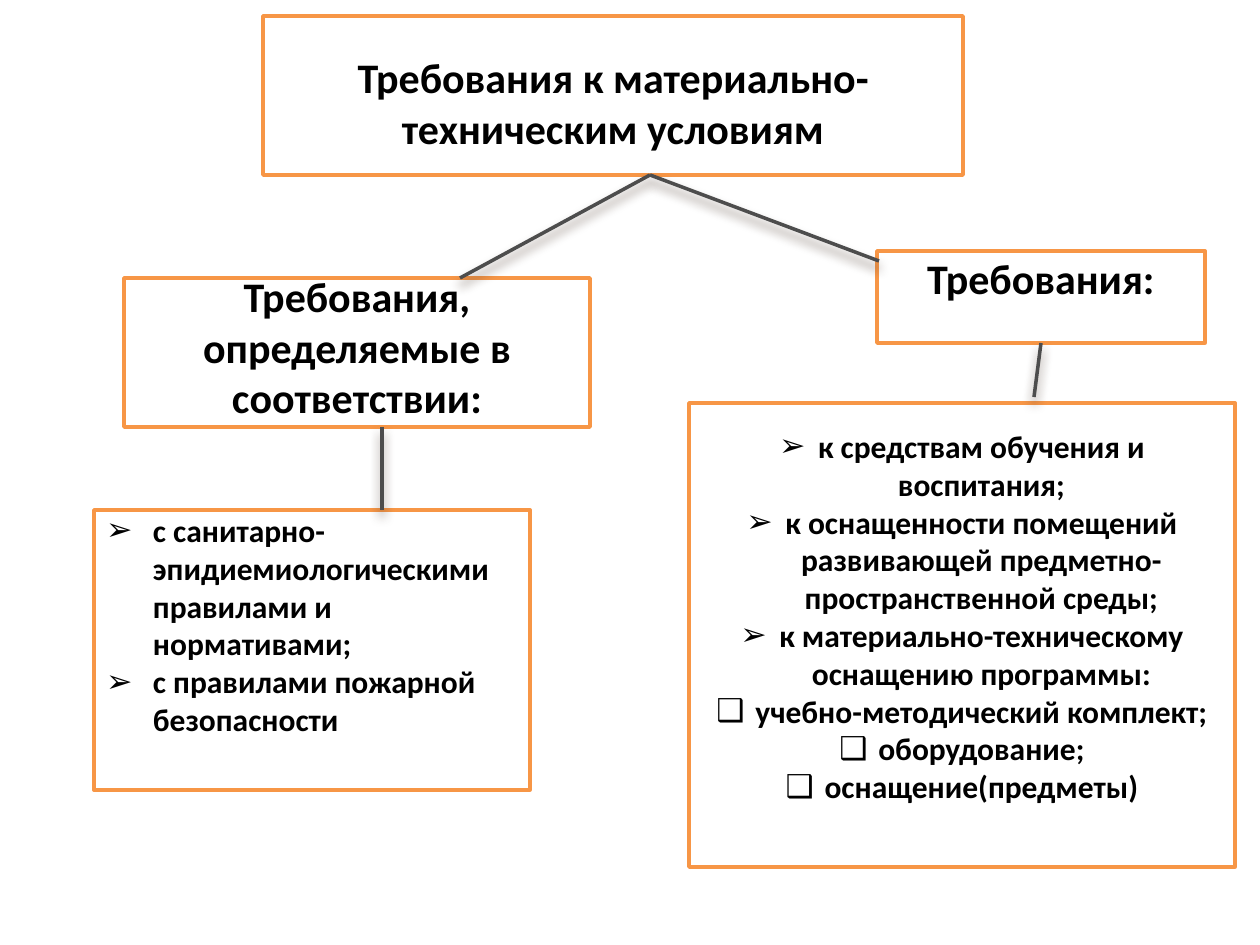
from lxml import etree
from pptx import Presentation
from pptx import util as u
from pptx.dml.color import RGBColor
from pptx.enum import shapes, text
from pptx.oxml.ns import qn

PX = 914400 / 126
COMPARISON_LAYOUT = 4
ARROW, SQUARE = "➢", "❑"


def px(length):
    return u.Emu(round(length * PX))


def color(value):
    return RGBColor.from_string(value)


def write(para, words, size=24, align=text.PP_ALIGN.CENTER, bullet=None, indent=0):
    para.alignment = align
    para.space_before = u.Pt(0)
    span = para.add_run()
    span.text = words
    span.font.name = "Calibri"
    span.font.size = u.Pt(size)
    span.font.bold = True
    span.font.color.rgb = color("000000")
    if bullet:
        props = para._p.get_or_add_pPr()
        props.set("marL", str(px(indent)))
        props.set("indent", str(-px(indent)))
        props.set("lvl", "0")
        etree.SubElement(props, qn("a:buChar")).set("char", bullet)


def frame(box, area, top=6, bottom=6):
    """Place the box, outline it and return its emptied text frame."""
    box.left, box.top, box.width, box.height = map(px, area)
    box.fill.solid()
    box.fill.fore_color.rgb = color("FFFFFF")
    box.line.color.rgb = color("F79646")
    box.line.width = u.Pt(2)
    body = box.text_frame
    body.word_wrap = True
    body.auto_size = text.MSO_AUTO_SIZE.NONE
    body.vertical_anchor = text.MSO_ANCHOR.MIDDLE
    body.margin_left = body.margin_right = px(12)
    body.margin_top, body.margin_bottom = px(top), px(bottom)
    return body


def heading(box, area, words, **margins):
    write(frame(box, area, **margins).paragraphs[0], words)


def bullet_list(box, area, items, bottom, **style):
    body = frame(box, area, bottom=bottom)
    for number, (bullet, words) in enumerate(items):
        para = body.add_paragraph() if number else body.paragraphs[0]
        write(para, words, size=18, bullet=bullet, **style)


def link(page, start, end):
    line = page.shapes.add_connector(
        shapes.MSO_CONNECTOR.STRAIGHT, *map(px, (*start, *end)))
    line.line.color.rgb = color("4D4D4D")
    line.line.width = u.Pt(2)
    effects = etree.SubElement(line._element.spPr, qn("a:effectLst"))
    shadow = etree.SubElement(
        effects, qn("a:outerShdw"), blurRad=str(u.Pt(6)), dist=str(u.Pt(4)),
        dir="5400000", rotWithShape="0")
    tint = etree.SubElement(shadow, qn("a:srgbClr"), val="4E3B30")
    etree.SubElement(tint, qn("a:alpha"), val="60000")
    return line


def requirements_page(deck):
    page = deck.slides.add_slide(deck.slide_layouts[COMPARISON_LAYOUT])
    title, norms, norm_list, needs, need_list = page.placeholders

    heading(title, (263, 16, 700, 159),
            "Требования к материально-техническим условиям", top=19)
    heading(norms, (124, 278, 466, 149),
            "Требования, определяемые в соответствии:", top=0, bottom=12)
    heading(needs, (877, 251, 328, 92), "Требования:", top=0, bottom=38)

    bullet_list(norm_list, (94, 510, 436, 280), [
        (ARROW, "с санитарно-эпидиемиологическими правилами и нормативами;"),
        (ARROW, "с правилами пожарной безопасности"),
    ], bottom=57, align=text.PP_ALIGN.LEFT, indent=47)
    bullet_list(need_list, (689, 403, 546, 464), [
        (ARROW, "к средствам обучения и воспитания;"),
        (ARROW, "к оснащенности помещений развивающей предметно-пространственной среды;"),
        (ARROW, "к материально-техническому оснащению программы:"),
        (SQUARE, "учебно-методический комплект;"),
        (SQUARE, "оборудование;"),
        (SQUARE, "оснащение(предметы)"),
    ], bottom=44, indent=39)

    fork = (650, 175)
    link(page, fork, (460, 278))
    link(page, fork, (879, 261))
    link(page, (382, 427), (382, 510))
    link(page, (1041, 343), (1034, 397)).begin_connect(needs, 2)


def main():
    deck = Presentation()
    deck.slide_width, deck.slide_height = px(1260), px(945)
    requirements_page(deck)
    deck.save("out.pptx")


if __name__ == "__main__":
    main()
